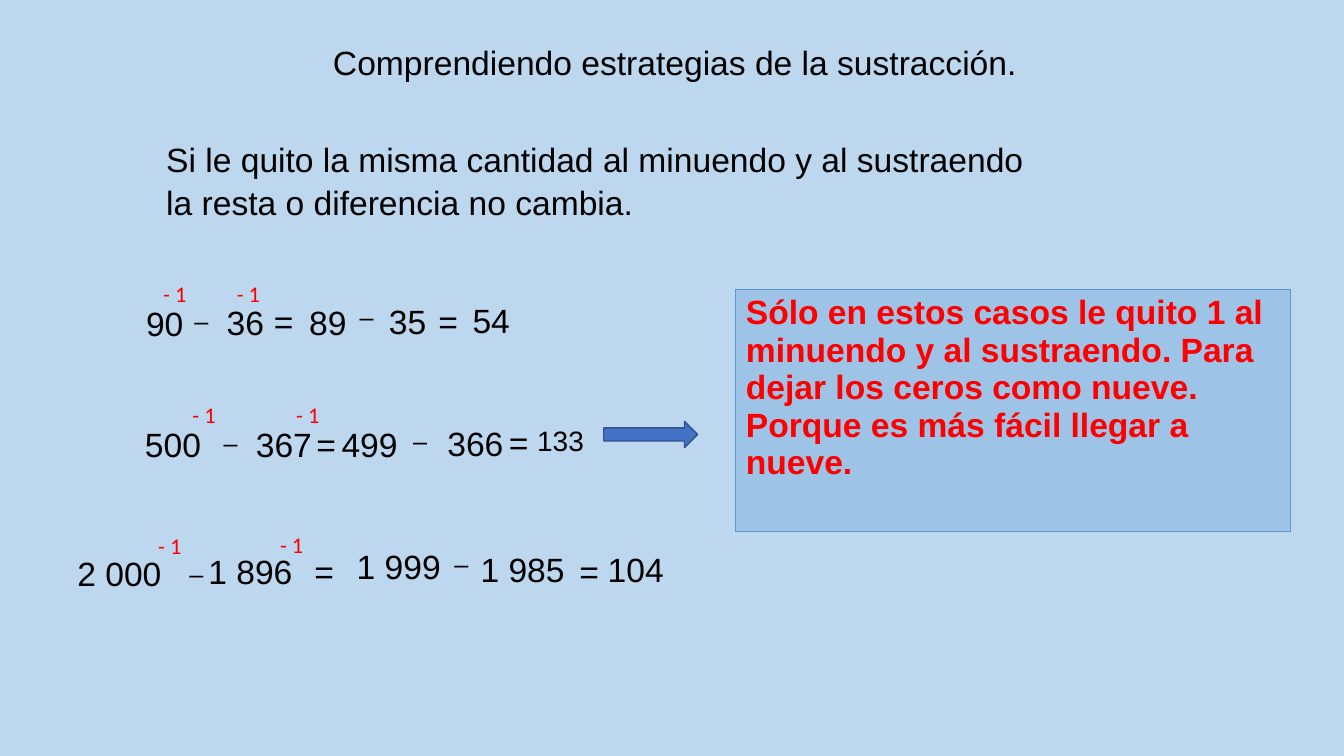
"""Build a slide on subtraction strategies with three worked examples."""
from lxml.etree import SubElement
from pptx import Presentation
from pptx.dml.color import RGBColor
from pptx.enum.shapes import MSO_SHAPE as Shape
from pptx.enum.text import PP_ALIGN as Align
from pptx.oxml.ns import qn
from pptx.util import Pt


def color(hex_string):
    return RGBColor.from_string(hex_string)


def add_text(text, left, top, width, height, size=24, font="Arial", fill="000000",
             align=Align.LEFT, inset_left=7.2, inset_top=3.6, spacing=1.0, after=0):
    shape = slide.shapes.add_textbox(Pt(left), Pt(top), Pt(width), Pt(height))
    frame = shape.text_frame
    frame.word_wrap = True
    frame.margin_left, frame.margin_top = Pt(inset_left), Pt(inset_top)
    paragraph = frame.paragraphs[0]
    paragraph.alignment = align
    paragraph.line_spacing = spacing
    paragraph.space_after = Pt(after)
    run = paragraph.add_run()
    run.text = text
    run.font.size = Pt(size)
    run.font.name = font
    run.font.color.rgb = color(fill)


presentation = Presentation()
presentation.slide_width, presentation.slide_height = Pt(960), Pt(540)
slide = presentation.slides.add_slide(presentation.slide_layouts[6])
slide.background.fill.solid()
slide.background.fill.fore_color.rgb = color("BDD7EE")

add_text("Comprendiendo estrategias de la sustracción.", 217, 26.6, 530, 36,
         align=Align.CENTER)
add_text("Si le quito la misma cantidad al minuendo y al sustraendo "
         "la resta o diferencia no cambia.", 111.6, 93.6, 642.2, 67,
         spacing=1.07, after=8)

minus_ones = [
    (97.2, 177.8, 52.6), (149.8, 177.8, 52.6),
    (118.1, 264.2, 52.6), (192.2, 264.2, 47.5),
    (93.6, 357.8, 52.6), (180.7, 357.1, 47.5),
]
for left, top, width in minus_ones:
    add_text("- 1", left, top, width, 51, size=16, font="Calibri", fill="FF0000",
             inset_left=19.4, inset_top=22.6)

equations = [
    [("90", 97.2, 213.1, 49), ("–", 131.8, 214.6, 23), ("36", 154.8, 212.4, 45.4),
     ("=", 188.6, 211.7, 23), ("89", 213.8, 212.4, 56.2), ("–", 249.8, 211.7, 23),
     ("35", 270.7, 211.7, 45.4), ("=", 306, 211.7, 23), ("54", 330.5, 211, 52.6)],
    [("500", 96.5, 299.5, 62.6), ("–", 152.6, 301.7, 23), ("367", 175.7, 299.5, 56.2),
     ("=", 218.9, 299.5, 23), ("499", 236.9, 299.5, 62.6), ("–", 288, 300.2, 23),
     ("366", 312.5, 298.8, 62.6), ("=", 356.4, 298.1, 23), ("133", 376.6, 298.8, 56.2)],
    [("2 000", 48.2, 391.7, 87.1), ("–", 128.2, 395.3, 23), ("1 896", 141.8, 390.2, 74.9),
     ("=", 217.4, 390.2, 23), ("1 999", 247.7, 386.6, 78.5), ("–", 317.5, 388.1, 23),
     ("1 985", 336.2, 388.8, 87.1), ("=", 406.8, 390.2, 23), ("104", 427, 388.8, 62.6)],
]
special_sizes = {"–": 18, "133": 20}
for equation in equations:
    for term, left, top, width in equation:
        size = special_sizes.get(term, 24)
        add_text(term, left, top, width, 1.2 * size + 7.2, size=size)

arrow = slide.shapes.add_shape(Shape.RIGHT_ARROW, Pt(431.3), Pt(301), Pt(67), Pt(18.7))
arrow.shadow.inherit = False
arrow.fill.solid()
arrow.fill.fore_color.rgb = color("4472C4")
arrow.line.color.rgb = color("325491")
arrow.line.width = Pt(1)

table = slide.shapes.add_table(1, 1, Pt(525.6), Pt(206.6), Pt(396), Pt(172.8)).table
note = table.cell(0, 0)
note.text = ("Sólo en estos casos le quito 1 al minuendo y al sustraendo. "
             "Para dejar los ceros como nueve. Porque es más fácil llegar a nueve.")
note_font = note.text_frame.paragraphs[0].runs[0].font
note_font.size, note_font.name, note_font.bold = Pt(24), "Arial", True
note_font.color.rgb = color("FF0000")
properties = note._tc.get_or_add_tcPr()
for side in ("lnL", "lnR", "lnT", "lnB"):
    border = SubElement(properties, qn(f"a:{side}"), w=str(Pt(1)))
    border_fill = SubElement(border, qn("a:solidFill"))
    SubElement(border_fill, qn("a:srgbClr"), val="5B9BD5")
note.fill.solid()
note.fill.fore_color.rgb = color("9DC3E6")

presentation.save("out.pptx")
